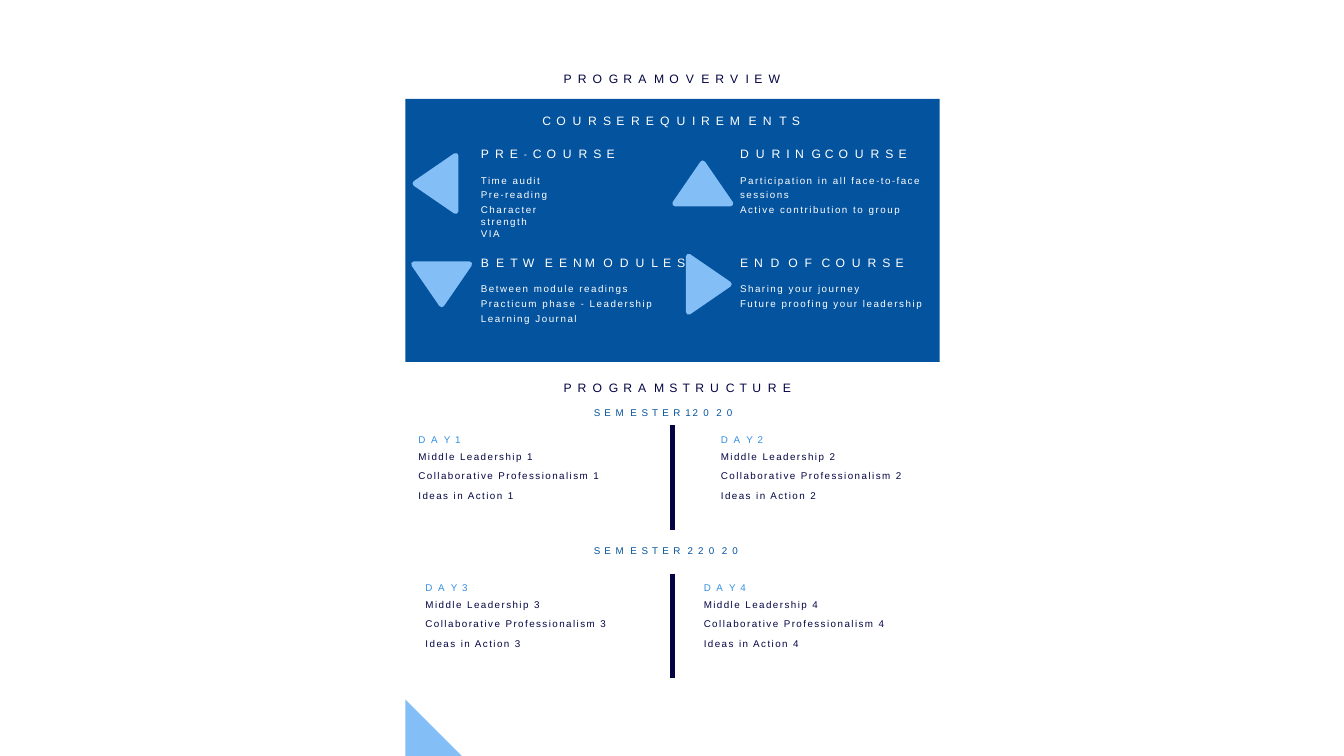
import itertools

import pptx
import pptx.dml.color
import pptx.enum.shapes
import pptx.enum.text
import pptx.oxml
import pptx.oxml.ns
import pptx.util

PX = 9144
NAVY, BLUE, MID_BLUE, SKY, WHITE = "040444", "04539E", "348EE3", "83BEF7", "FFFFFF"
HEADING_SIZE, BODY_SIZE = 8.7, 7
SHAPES = pptx.enum.shapes.MSO_SHAPE
TRACKING = dict(zip(
    "ABCDEGILMNOPQRSTUVWY-01234",
    [1.8, 1.3, 0.6, 1.3, 0.9, 0.6, 0.7, 0.7, 1.8, 1.5, 1.2, 1, 1.3,
     0.9, 0.6, 0.7, 1.2, 1.4, 2.5, 1, 1.3, 2.2, -0.6, 1.1, 0.7, 1.5]))
TRIANGLE_ROTATION = {"up": 0, "right": 90, "down": 180, "left": 270}

REQUIREMENTS = [
    {"heading": "PRE-COURSE", "tabs": [], "at": (75, 46), "list": (75, 74, 70),
     "items": ["Time audit", "Pre-reading", "Character strength VIA"],
     "spacing": {"line_spacing": 1.0, "space_before": 2.1},
     "triangle": ("left", 30, 84)},
    {"heading": "DURING COURSE", "tabs": [84], "at": (332, 46), "list": (332, 71, 190),
     "items": ["Participation in all face-to-face sessions", "Active contribution to group"],
     "spacing": {"line_spacing": 1.25}, "triangle": ("up", 295, 84)},
    {"heading": "BETWEEN MODULES", "tabs": [103], "at": (75, 154), "list": (75, 179, 190),
     "items": ["Between module readings", "Practicum phase - Leadership", "Learning Journal"],
     "spacing": {"line_spacing": 1.25}, "triangle": ("down", 36, 184)},
    {"heading": "END OF COURSE", "tabs": [48, 81], "at": (332, 154), "list": (332, 179, 190),
     "items": ["Sharing your journey", "Future proofing your leadership"],
     "spacing": {"line_spacing": 1.25}, "triangle": ("right", 301, 184)},
]


def px(length):
    return pptx.util.Emu(round(length * PX))


def color(value):
    return pptx.dml.color.RGBColor.from_string(value)


def add_filled(slide, kind, box, fill):
    shape = slide.shapes.add_shape(kind, *map(px, box))
    shape.shadow.inherit = False
    shape.fill.solid()
    shape.fill.fore_color.rgb = color(fill)
    shape.line.fill.background()
    return shape


def add_triangle(slide, direction, center_x, center_y):
    width, height = 55, 40
    box = (center_x - width / 2, center_y - height / 2, width, height)
    shape = add_filled(slide, SHAPES.ISOSCELES_TRIANGLE, box, SKY)
    shape.rotation = TRIANGLE_ROTATION[direction]
    shape.line.color.rgb = color(SKY)
    shape.line.width = pptx.util.Pt(4)
    pptx.oxml.ns.qn("a:round")
    line = shape.line._get_or_add_ln()
    line.append(line.makeelement(pptx.oxml.ns.qn("a:round"), {}))


def format_frame(shape, box):
    shape.left, shape.top, shape.width, shape.height = map(px, box)
    frame = shape.text_frame
    settings = {"margin_left": 0, "margin_top": px(1), "margin_right": 0, "margin_bottom": 0,
                "word_wrap": True, "auto_size": pptx.enum.text.MSO_AUTO_SIZE.NONE,
                "vertical_anchor": pptx.enum.text.MSO_ANCHOR.TOP}
    for name, value in settings.items():
        setattr(frame, name, value)
    frame.paragraphs[0].alignment = pptx.enum.text.PP_ALIGN.LEFT
    return frame


def add_frame(slide, box):
    return format_frame(slide.shapes.add_textbox(*map(px, box)), box)


def add_run(paragraph, text, size, fill, tracking, font="Arial"):
    run = paragraph.add_run()
    run.text = text
    run.font.color.rgb = color(fill)
    for name, value in {"size": pptx.util.Pt(size), "name": font, "bold": False}.items():
        setattr(run.font, name, value)
    run.font._element.set("spc", str(round(tracking * 100)))


def write_spaced(paragraph, text, size, fill, tabs=()):
    if tabs:
        properties = paragraph._p.get_or_add_pPr()
        tab_list = properties.makeelement(pptx.oxml.ns.qn("a:tabLst"), {})
        properties.append(tab_list)
        for position in tabs:
            tab = tab_list.makeelement(pptx.oxml.ns.qn("a:tab"), {"pos": str(px(position)), "algn": "l"})
            tab_list.append(tab)
    spaced = "\t".join(" ".join(word) for word in text.split())
    pairs = [spaced[start:start + 2] for start in range(0, len(spaced), 2)]

    def style(pair):
        return TRACKING.get(pair[0], 0.6) * size / HEADING_SIZE, pair[0] == "-"

    for (tracking, hyphen), group in itertools.groupby(pairs, style):
        add_run(paragraph, "".join(group), BODY_SIZE if hyphen else size, fill, tracking,
                "Roboto" if hyphen else "Arial")


def write_body(paragraph, text, fill, tracking):
    for hyphen, group in itertools.groupby(text, lambda letter: letter == "-"):
        add_run(paragraph, "".join(group), BODY_SIZE, fill, tracking,
                "Calibri" if hyphen else "Arial")


def add_heading(slide, box, text, size, fill, tabs=()):
    write_spaced(add_frame(slide, box).paragraphs[0], text, size, fill, tabs)


def add_list(slide, box, items, spacing):
    frame = add_frame(slide, box)
    for index, item in enumerate(items):
        paragraph = frame.paragraphs[0] if index == 0 else frame.add_paragraph()
        paragraph.line_spacing = spacing["line_spacing"]
        if index:
            paragraph.space_before = pptx.util.Pt(spacing.get("space_before", 0))
        write_body(paragraph, item, WHITE, 1.1)


def add_requirements(slide, box):
    left, top = box[:2]
    add_filled(slide, SHAPES.RECTANGLE, box, BLUE)
    add_heading(slide, (left + 136, top + 13, 260, 15), "COURSE REQUIREMENTS",
                HEADING_SIZE, WHITE, [88])
    for part in REQUIREMENTS:
        x, y = part["at"]
        add_heading(slide, (left + x, top + y, 205, 15), part["heading"],
                    HEADING_SIZE, WHITE, part["tabs"])
        x, y, width = part["list"]
        add_list(slide, (left + x, top + y, width, 45), part["items"], part["spacing"])
        direction, x, y = part["triangle"]
        add_triangle(slide, direction, left + x, top + y)


def add_day(slide, box, number):
    frame = add_frame(slide, box)
    frame.margin_top = px(6)
    write_spaced(frame.paragraphs[0], f"DAY{number}", BODY_SIZE, MID_BLUE)
    topics = [("Middle Leadership", 3.7), ("Collaborative Professionalism", 5.5),
              ("Ideas in Action", 5.5)]
    for topic, space_before in topics:
        paragraph = frame.add_paragraph()
        paragraph.space_before = pptx.util.Pt(space_before)
        write_body(paragraph, f"{topic} {number}", NAVY, 1.05)


def add_semester(slide, box, heading, heading_top, days):
    left, top, width, height = box
    add_heading(slide, (left + 187, heading_top, 160, 13), heading, BODY_SIZE, BLUE, [93])
    middle = left + width / 2
    divider = slide.shapes.add_connector(
        pptx.enum.shapes.MSO_CONNECTOR.STRAIGHT,
        px(middle), px(top), px(middle), px(top + height))
    divider.line.color.rgb = color(NAVY)
    divider.line.width = pptx.util.Pt(3.44)
    properties = divider._element.spPr
    properties.append(properties.makeelement(pptx.oxml.ns.qn("a:effectLst"), {}))
    for number, offset in days.items():
        add_day(slide, (left + offset, top + 2, 195, 72), number)


def main():
    presentation = pptx.Presentation()
    presentation.slide_width, presentation.slide_height = px(1333), px(750)
    slide = presentation.slides.add_slide(presentation.slide_layouts[5])
    title = format_frame(slide.shapes.title, (559, 70, 220, 15))
    write_spaced(title.paragraphs[0], "PROGRAM OVERVIEW", HEADING_SIZE, NAVY, [105])
    add_filled(slide, SHAPES.RIGHT_TRIANGLE, (402, 694, 56, 56), SKY)
    add_requirements(slide, (402, 98, 530, 261))
    add_heading(slide, (559, 376, 230, 15), "PROGRAM STRUCTURE", HEADING_SIZE, NAVY, [105])
    add_semester(slide, (402, 422, 530, 104), "SEMESTER12020", 403, {1: 13, 2: 313})
    add_semester(slide, (402, 569, 530, 104), "SEMESTER 22020", 539, {3: 20, 4: 296})
    presentation.save("out.pptx")


if __name__ == "__main__":
    main()
